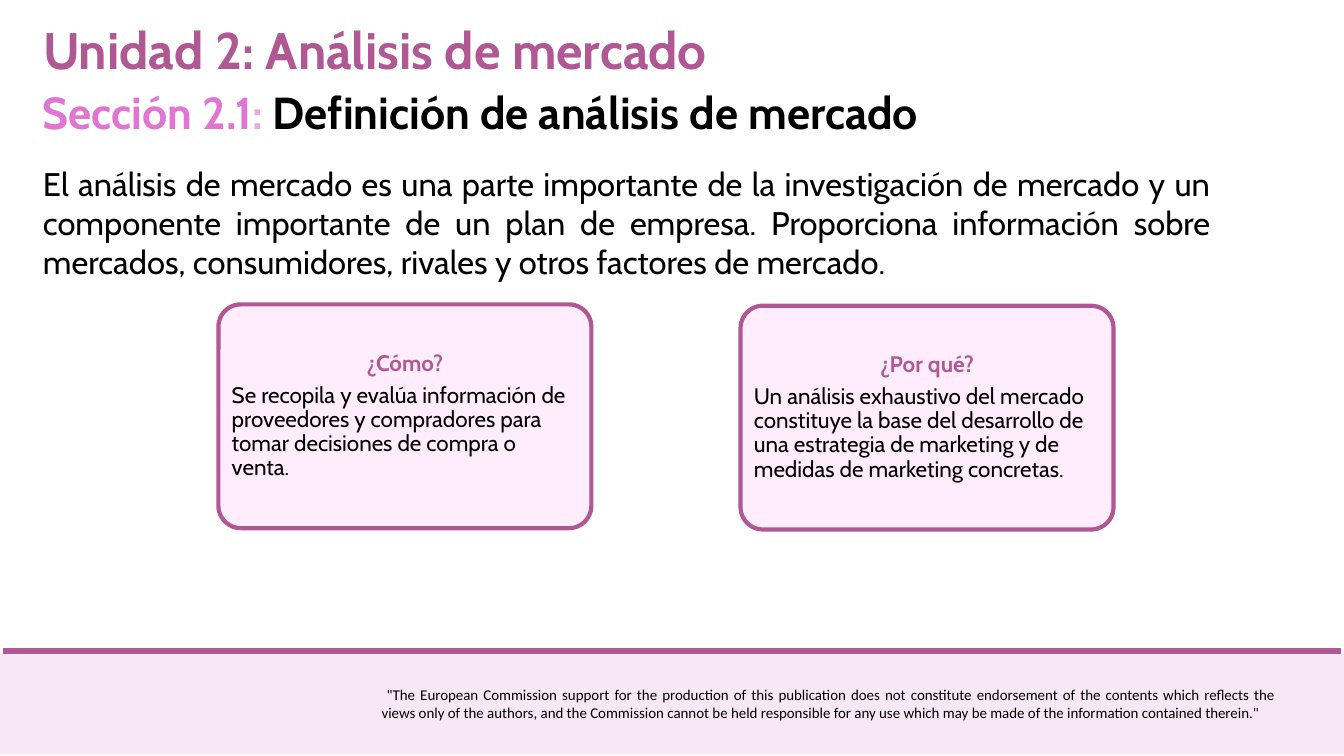
from lxml.etree import SubElement
from pptx import Presentation
from pptx.dml.color import RGBColor
from pptx.enum.shapes import MSO_CONNECTOR, MSO_SHAPE
from pptx.enum.text import MSO_ANCHOR, MSO_AUTO_SIZE, PP_ALIGN
from pptx.oxml.ns import qn
from pptx.util import Inches, Pt

PURPLE, BLACK = "B05894", "000000"


def colour(hex_string):
    return RGBColor.from_string(hex_string)


def add_run(para, text, size, hex_string, bold=False, font="Cabin"):
    span = para.add_run()
    span.text = text
    span.font.name = font
    span.font.size = Pt(size)
    span.font.bold = bold
    span.font.color.rgb = colour(hex_string)


def place(shape, left, top, width, height):
    shape.left, shape.top = Inches(left), Inches(top)
    shape.width, shape.height = Inches(width), Inches(height)


def add_text_box(page, left, top, width, height, align=PP_ALIGN.LEFT):
    """Add a wrapping text box and return its text frame."""
    box = page.shapes.add_textbox(
        Inches(left), Inches(top), Inches(width), Inches(height))
    frame = box.text_frame
    frame.word_wrap = True
    frame.paragraphs[0].alignment = align
    return frame


def add_footer(page, left, top, width, height):
    # Band
    band = page.shapes.add_shape(
        MSO_SHAPE.RECTANGLE, Inches(left), Inches(top), Inches(width), Inches(height))
    band.shadow.inherit = False
    band.fill.solid()
    band.fill.fore_color.rgb = colour("F6E9F5")
    band.line.fill.background()

    # Rule along the top
    rule_y = Inches(top - 0.03)
    rule = page.shapes.add_connector(
        MSO_CONNECTOR.STRAIGHT, Inches(left + 0.05), rule_y,
        Inches(left + width - 0.05), rule_y)
    rule.line.color.rgb = colour(PURPLE)
    rule.line.width = Pt(6.75)
    SubElement(rule._element.spPr, qn("a:effectLst"))

    # Disclaimer
    frame = add_text_box(page, left + 5.58, top + 0.43, 13.5, 0.64, PP_ALIGN.JUSTIFY)
    add_run(frame.paragraphs[0],
            ' "The European Commission support for the production of this publication '
            "does not constitute endorsement of the contents which reflects the views "
            "only of the authors, and the Commission cannot be held responsible for any "
            'use which may be made of the information contained therein."',
            16, BLACK, font="Calibri")


def add_heading(page, left, top):
    # Unit title
    title = page.shapes.title
    place(title, left, top, 11.04, 1.03)
    frame = title.text_frame
    frame.auto_size = MSO_AUTO_SIZE.NONE
    frame.vertical_anchor = MSO_ANCHOR.TOP
    para = frame.paragraphs[0]
    para.alignment = PP_ALIGN.LEFT
    add_run(para, "Unidad 2: Análisis de mercado", 55, PURPLE, bold=True)

    # Section title
    para = add_text_box(page, left, top + 0.99, 14.87, 0.91).paragraphs[0]
    for text, hex_string in (("Sección 2.1", "E076D1"), (": ", "ECAAE3"),
                             ("Definición de análisis de mercado", BLACK)):
        add_run(para, text, 48, hex_string, bold=True)


def add_intro(page, left, top, width, height):
    frame = add_text_box(page, left, top, width, height, PP_ALIGN.JUSTIFY)
    add_run(frame.paragraphs[0],
            "El análisis de mercado es una parte importante de la investigación de "
            "mercado y un componente importante de un plan de empresa. Proporciona "
            "información sobre mercados, consumidores, rivales y otros factores de "
            "mercado.", 35, BLACK)


def add_card(page, left, top, width, height, question, answer):
    card = page.shapes.add_shape(
        MSO_SHAPE.ROUNDED_RECTANGLE,
        Inches(left), Inches(top), Inches(width), Inches(height))
    card.adjustments[0] = 0.1
    card.shadow.inherit = False
    card.fill.solid()
    card.fill.fore_color.rgb = colour("FFECFC")
    card.line.color.rgb = colour(PURPLE)
    card.line.width = Pt(4.5)

    # Question and answer, inset from the border
    inset = 0.1
    frame = add_text_box(page, left + inset, top + inset,
                         width - 2 * inset, height - 2 * inset)
    frame.vertical_anchor = MSO_ANCHOR.MIDDLE
    frame.margin_top = frame.margin_bottom = Inches(0.1)
    heading, body = frame.paragraphs[0], frame.add_paragraph()
    heading.alignment, body.alignment = PP_ALIGN.CENTER, PP_ALIGN.LEFT
    add_run(heading, question, 24, PURPLE, bold=True)
    add_run(body, answer, 24, BLACK)
    for para in (heading, body):
        para.line_spacing = 0.9
        para.space_after = Pt(8.4)


def main():
    deck = Presentation()
    deck.slide_width, deck.slide_height = Inches(20), Inches(11.25)
    page = deck.slides.add_slide(deck.slide_layouts[5])

    add_footer(page, 0, 9.72, 20, 1.51)
    add_intro(page, 0.54, 2.39, 17.58, 1.87)
    add_heading(page, 0.54, 0.22)

    cards = (
        (3.25, 4.53, "¿Cómo?",
         "Se recopila y evalúa información de proveedores y compradores para tomar "
         "decisiones de compra o venta."),
        (11.02, 4.55, "¿Por qué?",
         "Un análisis exhaustivo del mercado constituye la base del desarrollo de una "
         "estrategia de marketing y de medidas de marketing concretas."),
    )
    for left, top, question, answer in cards:
        add_card(page, left, top, 5.55, 3.33, question, answer)

    deck.save("out.pptx")


if __name__ == "__main__":
    main()
